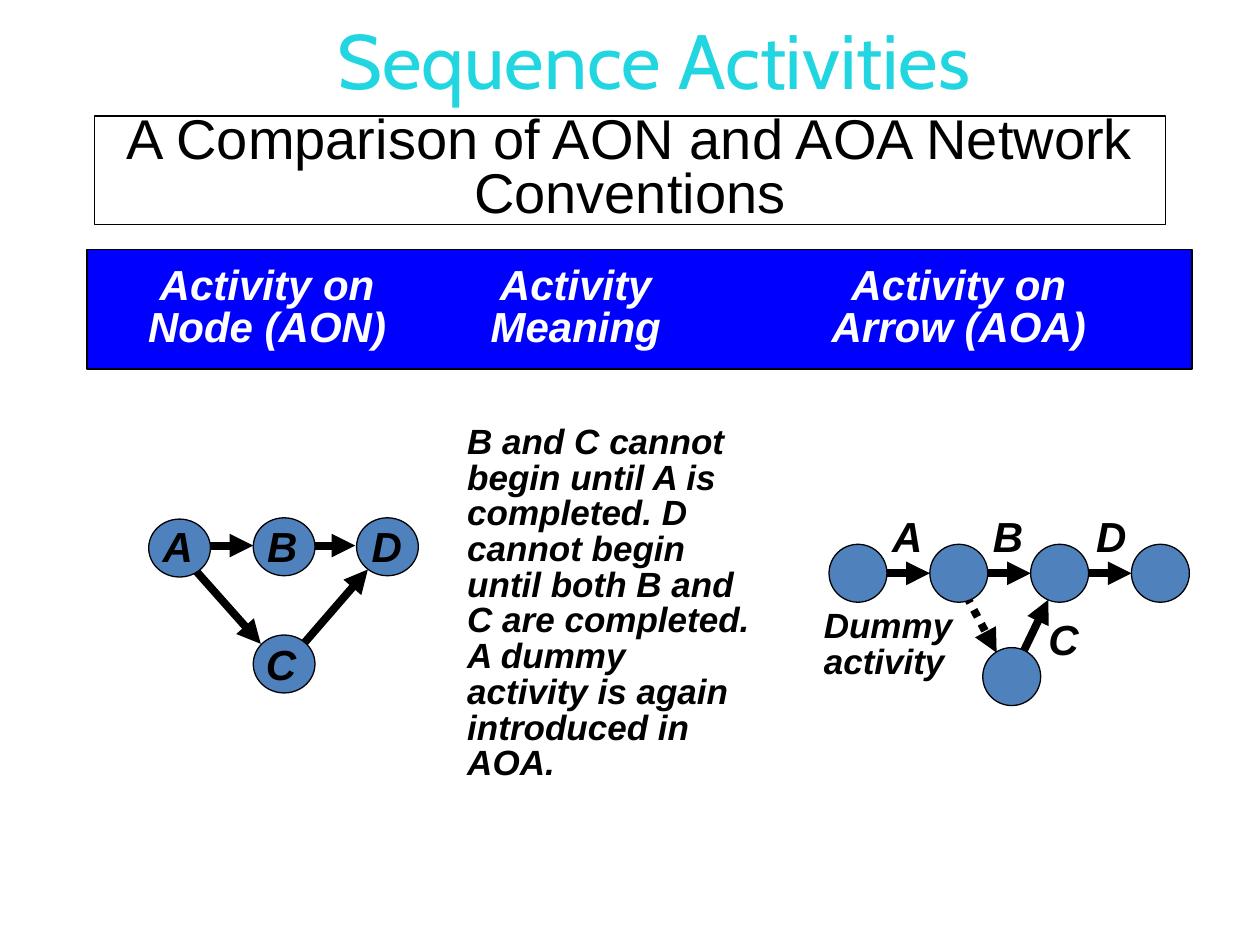
from lxml import etree
from pptx import Presentation
from pptx import util as u
from pptx.dml.color import RGBColor
from pptx.enum import dml, shapes, text
from pptx.oxml.ns import qn

COLORS = {"title": "21D6E0", "black": "000000", "white": "FFFFFF",
          "header": "0000FF", "node": "4F81BD"}
NODE_TEXT = dict(size=24, bold=True, align="CENTER", wrap=False)
NOTE_TEXT = dict(size=20, bold=True, spacing=0.85)

prs = Presentation()
prs.slide_width, prs.slide_height = u.Inches(10), u.Inches(7.5)
s = prs.slides.add_slide(prs.slide_layouts[6])


def add_text(content, box, kind=None, fill=None, size=20, font="Arial", color="black",
             bold=False, align="LEFT", anchor="TOP", spacing=1.0, wrap=True,
             inset=(0.1, 0.05), tabs=()):
    """Add text in a text box, or in a preset shape when kind is given."""
    box = [u.Inches(v) for v in box]
    if kind is None:
        sp = s.shapes.add_textbox(*box)
    else:
        sp = s.shapes.add_shape(kind, *box)
        sp.shadow.inherit = False
        sp.line.color.rgb = RGBColor.from_string(COLORS["black"])
        sp.line.width = u.Pt(0.75)
        if fill:
            sp.fill.solid()
            sp.fill.fore_color.rgb = RGBColor.from_string(COLORS[fill])
        else:
            sp.fill.background()
    tf = sp.text_frame
    tf.word_wrap = wrap
    tf.vertical_anchor = text.MSO_ANCHOR[anchor]
    tf.margin_left = tf.margin_right = u.Inches(inset[0])
    tf.margin_top = tf.margin_bottom = u.Inches(inset[1])
    for i, line in enumerate(content.split("\n") if content else []):
        p = tf.paragraphs[0] if i == 0 else tf.add_paragraph()
        p.alignment = text.PP_ALIGN[align]
        p.line_spacing = spacing
        if tabs:
            tab_list = etree.SubElement(p._p.get_or_add_pPr(), qn("a:tabLst"))
            for pos in tabs:
                etree.SubElement(tab_list, qn("a:tab"), pos=str(u.Inches(pos)), algn="ctr")
        r = p.add_run()
        r.text = line
        r.font.name, r.font.size = font, u.Pt(size)
        r.font.bold = r.font.italic = bold
        r.font.color.rgb = RGBColor.from_string(COLORS[color])
    return sp


def add_arrow(x1, y1, x2, y2, dotted=False):
    c = s.shapes.add_connector(shapes.MSO_CONNECTOR.STRAIGHT,
                               *[u.Inches(v) for v in (x1, y1, x2, y2)])
    c.line.color.rgb = RGBColor.from_string(COLORS["black"])
    c.line.width = u.Pt(4.5)
    if dotted:
        c.line.dash_style = dml.MSO_LINE.ROUND_DOT
    etree.SubElement(c.line._get_or_add_ln(), qn("a:tailEnd"), type="triangle")
    etree.SubElement(c._element.spPr, qn("a:effectLst"))


# Titles
add_text("Sequence Activities", (1.56, 0.05, 7.26, 0.84),
         size=44, font="Cabin", color="title", align="CENTER")
add_text("A Comparison of AON and AOA Network Conventions", (0.75, 0.92, 8.5, 0.86),
         kind=shapes.MSO_SHAPE.RECTANGLE, size=32, align="CENTER", anchor="MIDDLE",
         spacing=0.8)

# Column headings, centred on tab stops
add_text("\tActivity on\tActivity\tActivity on\n\tNode (AON)\tMeaning\tArrow (AOA)",
         (0.69, 1.98, 8.77, 0.95), kind=shapes.MSO_SHAPE.RECTANGLE, fill="header",
         size=24, color="white", bold=True, spacing=0.85, inset=(0.26, 0.13),
         tabs=(1.17, 3.62, 6.66))

# Activity meaning
add_text("B and C cannot begin until A is completed. D cannot begin until both B and C "
         "are completed. A dummy activity is again introduced in AOA.",
         (3.61, 3.33, 2.48, 2.93), **NOTE_TEXT)

# Activity on node: arrows, then nodes with their letters
for ends in [(1.51, 4.48, 2.07, 5.11), (2.34, 5.19, 2.92, 4.52),
             (1.49, 4.33, 2.01, 4.33), (2.31, 4.33, 2.82, 4.33)]:
    add_arrow(*ends)
for letter, x, y, text_x, text_y in [("A", 1.18, 4.12, 1.19, 4.08),
                                     ("C", 2.01, 5.04, 2.01, 5.02),
                                     ("D", 2.83, 4.11, 2.85, 4.08),
                                     ("B", 2.01, 4.11, 2.02, 4.08)]:
    add_text("", (x, y, 0.49, 0.46), kind=shapes.MSO_SHAPE.OVAL, fill="node")
    add_text(letter, (text_x, text_y, 0.44, 0.5), **NODE_TEXT)

# Activity on arrow: a row of four events and one below
EVENT, STEP, ROW_X, ROW_Y = 0.46, 0.8, 6.58, 4.32
for i in range(3):
    x = ROW_X + i * STEP
    add_arrow(x + 0.28, ROW_Y + EVENT / 2, x + STEP, ROW_Y + EVENT / 2)
add_arrow(8.09, 5.24, 8.32, 4.76)
add_arrow(7.67, 4.73, 7.91, 5.18, dotted=True)
for x, y in [(ROW_X + i * STEP, ROW_Y) for i in range(4)] + [(7.8, 5.14)]:
    add_text("", (x, y, EVENT, EVENT), kind=shapes.MSO_SHAPE.OVAL, fill="node")
for letter, x, y in [("A", 6.98, 4), ("B", 7.78, 4), ("D", 8.6, 4), ("C", 8.22, 4.82)]:
    add_text(letter, (x, y, 0.44, 0.5), **NODE_TEXT)
add_text("Dummy activity", (6.44, 4.79, 1.4, 0.67), **NOTE_TEXT)

prs.save("out.pptx")
